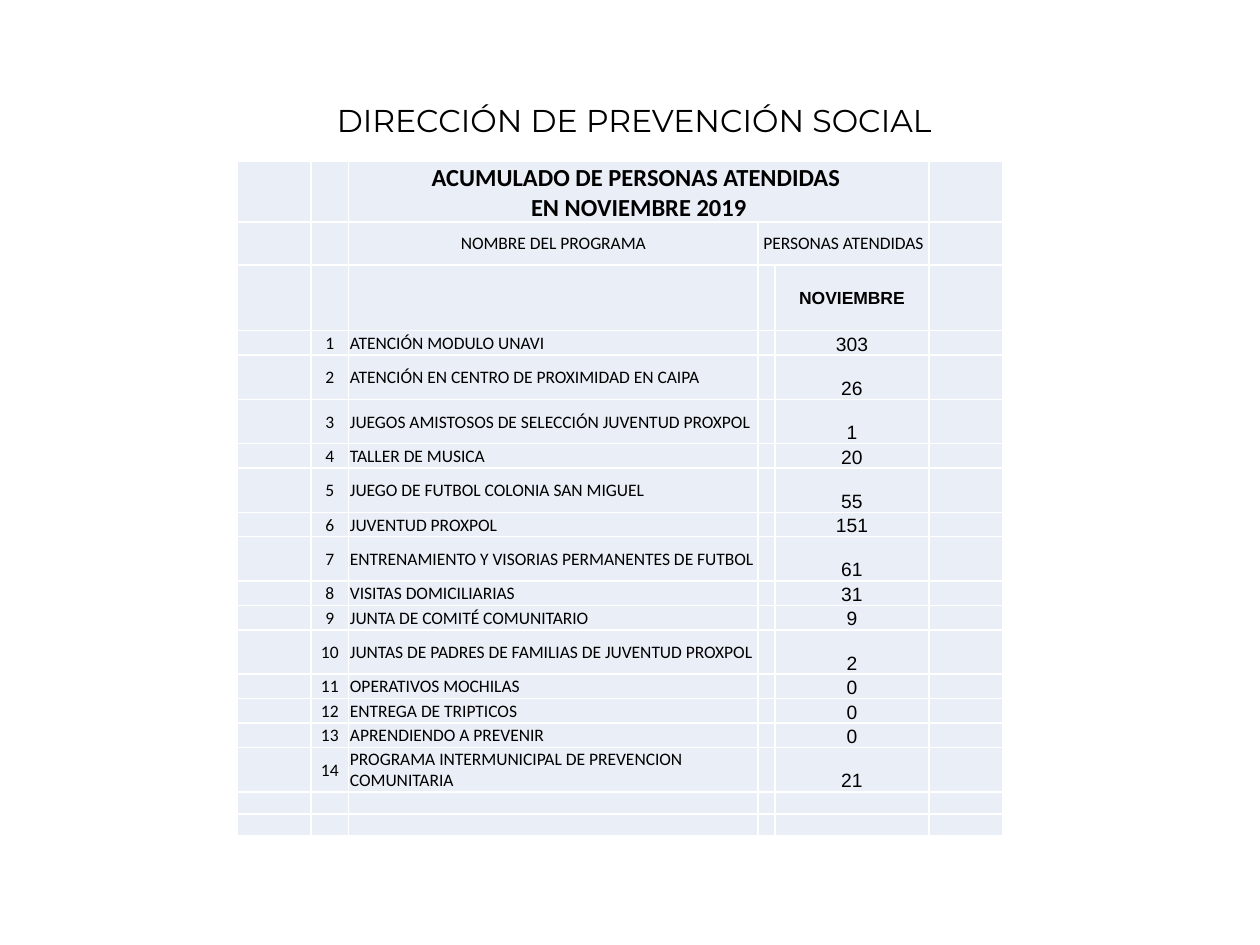
from lxml.etree import SubElement
from pptx import Presentation
from pptx.dml.color import RGBColor
from pptx.enum.text import MSO_ANCHOR as Anchor, PP_ALIGN as Align
from pptx.oxml.ns import qn
from pptx.util import Pt

# Content
TITLE = "DIRECCIÓN DE PREVENCIÓN SOCIAL"
HEADING = ["ACUMULADO DE PERSONAS ATENDIDAS ", "EN NOVIEMBRE 2019"]
PROGRAM_LABEL, PEOPLE_LABEL, MONTH = "NOMBRE DEL PROGRAMA", "PERSONAS ATENDIDAS", "NOVIEMBRE"
PROGRAMS = [
    ("ATENCIÓN MODULO UNAVI", 303),
    ("ATENCIÓN EN CENTRO DE PROXIMIDAD EN CAIPA", 26),
    ("JUEGOS AMISTOSOS DE SELECCIÓN JUVENTUD PROXPOL", 1),
    ("TALLER DE MUSICA", 20),
    ("JUEGO DE FUTBOL COLONIA SAN MIGUEL", 55),
    ("JUVENTUD PROXPOL", 151),
    ("ENTRENAMIENTO Y VISORIAS PERMANENTES DE FUTBOL", 61),
    ("VISITAS DOMICILIARIAS", 31),
    ("JUNTA DE COMITÉ COMUNITARIO", 9),
    ("JUNTAS DE PADRES DE FAMILIAS DE JUVENTUD PROXPOL", 2),
    ("OPERATIVOS MOCHILAS", 0),
    ("ENTREGA DE TRIPTICOS", 0),
    ("APRENDIENDO A PREVENIR", 0),
    ("PROGRAMA INTERMUNICIPAL DE PREVENCION COMUNITARIA", 21),
]

# Format
BLACK = RGBColor(0x00, 0x00, 0x00)
PALE_BLUE = RGBColor(0xEA, 0xEF, 0xF7)
BORDER = "FFFFFF"
TITLE_FONT = {"name": "Montserrat", "size": Pt(18)}
HEADING_FONT = {"name": "Calibri", "size": Pt(14), "bold": True}
LABEL_FONT = {"name": "Calibri", "size": Pt(10), "bold": False}
MONTH_FONT = {"name": "Arial", "size": Pt(10), "bold": True}
COUNT_FONT = {"name": "Arial", "size": Pt(11), "bold": False}
MARGINS = {"margin_left": Pt(0.72), "margin_right": Pt(0.72),
           "margin_top": Pt(0.72), "margin_bottom": Pt(0)}

# Table grid: programs with long names get a tall row
COLUMNS = [42.2, 21.7, 233.8, 9.8, 88, 42]
NUMBER, NAME, GAP, COUNT = 1, 2, 3, 4
HEADER_ROWS = [34.3, 24.6, 37.6]
SHORT, TALL, LONG_NAME = 14, 25.3, 30
FOOTER_ROWS = [12.6, 12.6]
ROWS = (HEADER_ROWS
        + [TALL if len(name) > LONG_NAME else SHORT for name, _ in PROGRAMS]
        + FOOTER_ROWS)


def set_all(target, values):
    for key, value in values.items():
        setattr(target, key, value)


def write(frame, lines, font, align=Align.CENTER):
    for index, line in enumerate(lines):
        paragraph = frame.add_paragraph() if index else frame.paragraphs[0]
        paragraph.alignment = align
        run = paragraph.add_run()
        run.text = line
        set_all(run.font, font)
        run.font.color.rgb = BLACK


def style_cell(cell):
    set_all(cell, MARGINS)
    cell.vertical_anchor = Anchor.MIDDLE
    properties = cell._tc.get_or_add_tcPr()
    for side in ("a:lnL", "a:lnR", "a:lnT", "a:lnB"):
        line = SubElement(properties, qn(side), w=str(Pt(1)))
        SubElement(SubElement(line, qn("a:solidFill")), qn("a:srgbClr"), val=BORDER)
    cell.fill.solid()
    cell.fill.fore_color.rgb = PALE_BLUE
    # Small end mark, so that empty cells do not stretch their row
    SubElement(cell.text_frame.paragraphs[0]._p, qn("a:endParaRPr"), sz="800")


prs = Presentation()
prs.slide_width, prs.slide_height = Pt(720), Pt(540)
slide = prs.slides.add_slide(prs.slide_layouts[6])

# Title
title = slide.shapes.add_textbox(Pt(116), Pt(54), Pt(493), Pt(29)).text_frame
title.word_wrap = True
write(title, [TITLE], TITLE_FONT)

# Table
table = slide.shapes.add_table(len(ROWS), len(COLUMNS), Pt(135.4), Pt(92.4),
                               Pt(sum(COLUMNS)), Pt(sum(ROWS))).table
for column, width in zip(table.columns, COLUMNS):
    column.width = Pt(width)
for row, height in zip(table.rows, ROWS):
    row.height = Pt(height)
for cell in table.iter_cells():
    style_cell(cell)

# Header rows
table.cell(0, NAME).merge(table.cell(0, COUNT))
table.cell(1, GAP).merge(table.cell(1, COUNT))
for row, column, lines, font in [
    (0, NAME, HEADING, HEADING_FONT),
    (1, NAME, [PROGRAM_LABEL], LABEL_FONT),
    (1, GAP, [PEOPLE_LABEL], LABEL_FONT),
    (2, COUNT, [MONTH], MONTH_FONT),
]:
    write(table.cell(row, column).text_frame, lines, font)

# Program rows
for number, (name, count) in enumerate(PROGRAMS, 1):
    row = len(HEADER_ROWS) + number - 1
    write(table.cell(row, NUMBER).text_frame, [str(number)], LABEL_FONT)
    write(table.cell(row, NAME).text_frame, [name], LABEL_FONT, Align.LEFT)
    count_cell = table.cell(row, COUNT)
    count_cell.vertical_anchor = Anchor.BOTTOM
    write(count_cell.text_frame, [str(count)], COUNT_FONT)

prs.save("out.pptx")
